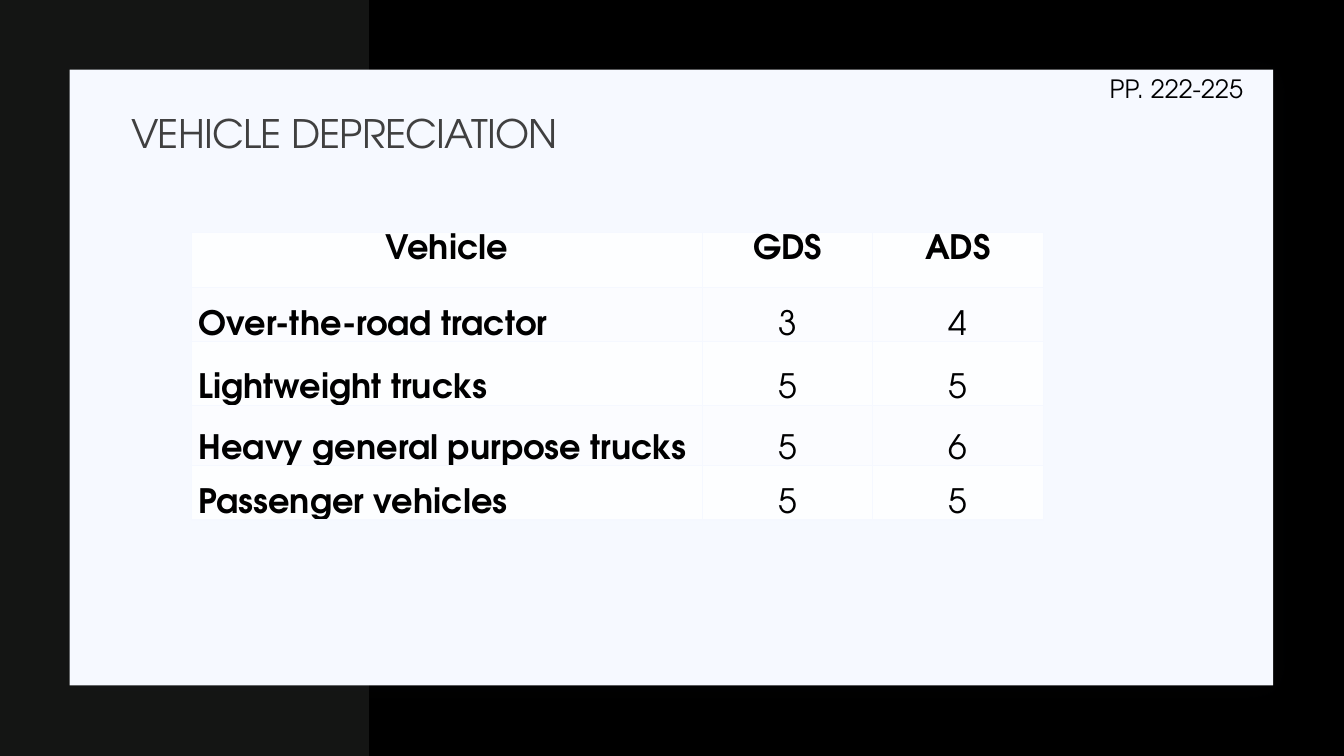
from dataclasses import dataclass

from lxml import etree
from pptx import Presentation
from pptx.dml.color import RGBColor
from pptx.enum.shapes import MSO_SHAPE
from pptx.enum.text import MSO_ANCHOR, MSO_AUTO_SIZE, PP_ALIGN
from pptx.oxml.ns import qn
from pptx.util import Pt

RECT = MSO_SHAPE.RECTANGLE
LEFT, CENTER, RIGHT = PP_ALIGN.LEFT, PP_ALIGN.CENTER, PP_ALIGN.RIGHT
TOP, MIDDLE, BOTTOM = MSO_ANCHOR.TOP, MSO_ANCHOR.MIDDLE, MSO_ANCHOR.BOTTOM
NO_FIT, GROW = MSO_AUTO_SIZE.NONE, MSO_AUTO_SIZE.SHAPE_TO_FIT_TEXT
PX = 9144  # 100 px to the inch


@dataclass(frozen=True)
class Theme:
    font: str = "TeX Gyre Adventor"
    back: str = "000000"
    side: str = "141514"
    panel: str = "F6F9FF"
    shadow: str = "1F2125"
    title: str = "404040"
    text: str = "000000"
    border: str = "F5F8FF"
    bands: tuple = ("FDFEFF", "FBFCFF")
    title_size: int = 28
    table_size: int = 24
    note_size: int = 18


def rgb(color):
    return RGBColor.from_string(color)


def add_color(parent, color):
    fill = etree.SubElement(parent, qn("a:solidFill"))
    etree.SubElement(fill, qn("a:srgbClr"), val=color)


class SlideBuilder:
    def __init__(self, prs, theme):
        self.theme = theme
        self.s = prs.slides.add_slide(prs.slide_layouts[5])
        fill = self.s.background.fill
        fill.solid()
        fill.fore_color.rgb = rgb(theme.back)

    def run(self, p, text, size, color, bold=False):
        r = p.add_run()
        r.text = text
        r.font.name = self.theme.font
        r.font.size = Pt(size)
        r.font.bold = bold
        r.font.color.rgb = rgb(color)
        return r

    def place(self, sp, box):
        sp.left, sp.top, sp.width, sp.height = (v * PX for v in box)

    def rect(self, box, color):
        sp = self.s.shapes.add_shape(RECT, *(v * PX for v in box))
        sp.shadow.inherit = False
        sp.fill.solid()
        sp.fill.fore_color.rgb = rgb(color)
        sp.line.fill.background()
        return sp

    def soft_shadow(self, sp):
        effects = sp.element.spPr.find(qn("a:effectLst"))
        shadow = etree.SubElement(effects, qn("a:outerShdw"), blurRad=str(Pt(20)),
                                  dist=str(Pt(2)), dir=str(45 * 60000))
        color = etree.SubElement(shadow, qn("a:srgbClr"), val=self.theme.shadow)
        etree.SubElement(color, qn("a:alpha"), val="15000")

    def title(self, text, box):
        sp = self.s.shapes.title
        self.place(sp, box)
        self.s.shapes._spTree.append(sp.element)  # bring above the panel
        tf = sp.text_frame
        tf.auto_size = NO_FIT
        tf.word_wrap = True
        tf.vertical_anchor = MIDDLE
        p = tf.paragraphs[0]
        p.alignment = LEFT
        p.line_spacing = 0.9
        r = self.run(p, text, self.theme.title_size, self.theme.title)
        r.font._element.set("spc", "-50")

    def note(self, text, box):
        tf = self.s.shapes.add_textbox(*(v * PX for v in box)).text_frame
        tf.word_wrap = True
        tf.auto_size = GROW
        p = tf.paragraphs[0]
        p.alignment = RIGHT
        self.run(p, text, self.theme.note_size, self.theme.text)

    def borders(self, cell):
        tcPr = cell._tc.get_or_add_tcPr()
        for i, side in enumerate(("a:lnL", "a:lnR", "a:lnT", "a:lnB")):
            ln = etree.Element(qn(side), w=str(Pt(1)))
            add_color(ln, self.theme.border)
            tcPr.insert(i, ln)

    def cell(self, cell, text, row, col):
        label = row > 0 and col == 0
        cell.margin_left = cell.margin_right = 7 * PX
        cell.margin_top = cell.margin_bottom = 0
        cell.vertical_anchor = BOTTOM if row else TOP
        cell.fill.solid()
        cell.fill.fore_color.rgb = rgb(self.theme.bands[row % 2])
        self.borders(cell)
        p = cell.text_frame.paragraphs[0]
        p.alignment = LEFT if label else CENTER
        p.line_spacing = 1.07
        p.space_before = Pt(6 if row < 2 else 0)
        if label:  # hanging indent
            pPr = p._p.get_or_add_pPr()
            pPr.set("marL", str(10 * PX))
            pPr.set("indent", str(-10 * PX))
        self.run(p, text, self.theme.table_size, self.theme.text, row == 0 or label)

    def table(self, rows, left, top, widths, heights):
        box = (left, top, sum(widths), sum(heights))
        table = self.s.shapes.add_table(len(rows), len(widths),
                                        *(v * PX for v in box)).table
        table.first_row = table.horz_banding = False
        for column, width in zip(table.columns, widths):
            column.width = width * PX
        for i, (row, height) in enumerate(zip(rows, heights)):
            table.rows[i].height = height * PX
            for j, text in enumerate(row):
                self.cell(table.cell(i, j), text, i, j)


VEHICLES = [
    ("Vehicle", "GDS", "ADS"),
    ("Over-the-road tractor", "3", "4"),
    ("Lightweight trucks", "5", "5"),
    ("Heavy general purpose trucks", "5", "6"),
    ("Passenger vehicles", "5", "5"),
]


def main():
    prs = Presentation()
    prs.slide_width, prs.slide_height = 12192000, 750 * PX
    theme = Theme()
    slide = SlideBuilder(prs, theme)

    # Backdrop: side band and panel
    slide.rect((0, 0, 366, 750), theme.side)
    slide.soft_shadow(slide.rect((69, 69, 1194, 611), theme.panel))

    # Depreciation table
    slide.table(VEHICLES, 190, 231, (507, 169, 169), (54, 54, 63, 60, 54))

    # Title and page reference
    slide.title("VEHICLE DEPRECIATION", (120, 103, 1100, 64))
    slide.note("PP. 222-225", (1081, 68, 162, 40))

    prs.save("out.pptx")


if __name__ == "__main__":
    main()
